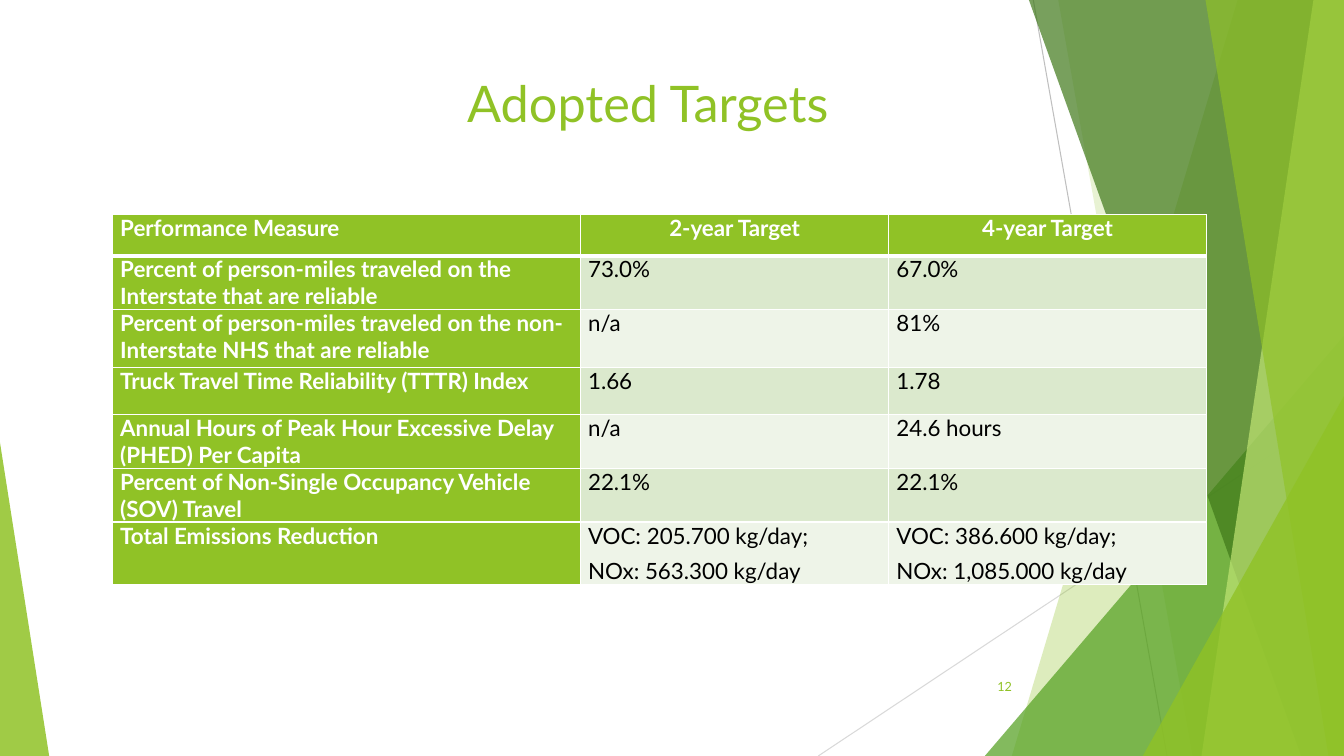
from dataclasses import dataclass

from lxml import etree
from pptx import Presentation
from pptx.dml.color import RGBColor
from pptx.enum import shapes, text
from pptx.oxml import ns
from pptx.util import Cm, Pt

GREEN = RGBColor(0x90, 0xC2, 0x26)
GRASS = RGBColor(0x54, 0xA0, 0x21)
FOREST = RGBColor(0x3F, 0x78, 0x19)
LIME = RGBColor(0xC0, 0xE4, 0x74)
PALE = RGBColor(0xDB, 0xE9, 0xCD)
MIST = RGBColor(0xEE, 0xF4, 0xE8)
SILVER = RGBColor(0xBF, 0xBF, 0xBF)
CLOUD = RGBColor(0xD9, 0xD9, 0xD9)
WHITE = RGBColor(0xFF, 0xFF, 0xFF)
BLACK = RGBColor(0, 0, 0)
FONT = "Lato"
WIDE, HIGH = 33.87, 19.05  # slide size in cm
ALIGN = text.PP_ALIGN


@dataclass
class Ray:
    start: tuple[float, float]
    end: tuple[float, float]
    color: RGBColor


@dataclass
class Slab:
    """A band from a slanted left edge to the right side of the slide."""
    top: float
    base: float
    color: RGBColor
    alpha: int


@dataclass
class Peak:
    """A right triangle standing on the bottom of the slide."""
    left: float
    top: float
    right: float
    tip: float
    color: RGBColor
    alpha: int


RAYS = [
    Ray((26.04, 0), (29.41, HIGH), SILVER),
    Ray((WIDE, 10.24), (20.62, HIGH), CLOUD),
]
DECOR = [
    Slab(31.19, 25.5, GREEN, 30),
    Slab(26.67, 30.05, GREEN, 20),
    Peak(24.82, 8.46, WIDE, 1, GRASS, 72),
    Slab(25.93, 32.79, FOREST, 70),
    Slab(33.1, 30.28, LIME, 70),
    Slab(30.38, 33.48, GREEN, 65),
    Peak(28.8, 9.98, WIDE, 1, GREEN, 80),
    Peak(0, 11.15, 1.24, 0, GREEN, 85),
]
COLS = [11.79, 7.77, 8.0]
ROWS = [1.04, 1.19, 1.45, 1.19, 1.19, 1.19, 1.5]
DATA = [
    ("Performance Measure", "2-year Target", "4-year Target"),
    ("Percent of person-miles traveled on the Interstate that are reliable",
     "73.0%", "67.0%"),
    ("Percent of person-miles traveled on the non-Interstate NHS that are reliable",
     "n/a", "81%"),
    ("Truck Travel Time Reliability (TTTR) Index", "1.66", "1.78"),
    ("Annual Hours of Peak Hour Excessive Delay (PHED) Per Capita",
     "n/a", "24.6 hours"),
    ("Percent of Non-Single Occupancy Vehicle (SOV) Travel", "22.1%", "22.1%"),
    ("Total Emissions Reduction",
     "VOC: 205.700 kg/day;\nNOx: 563.300 kg/day",
     "VOC: 386.600 kg/day;\nNOx: 1,085.000 kg/day"),
]


def add_run(par, words: str, size: float, color: RGBColor, bold: bool = False) -> None:
    run = par.add_run()
    run.text = words
    run.font.name = FONT
    run.font.size = Pt(size)
    run.font.bold = bold
    run.font.color.rgb = color


def draw_ray(slide, ray: Ray) -> None:
    ends = [Cm(v) for v in ray.start + ray.end]
    line = slide.shapes.add_connector(shapes.MSO_CONNECTOR.STRAIGHT, *ends)
    line.line.color.rgb = ray.color
    line.line.width = Pt(0.75)
    etree.SubElement(line.element.spPr, ns.qn("a:effectLst"))


def draw_decor(slide, item: Slab | Peak) -> None:
    if isinstance(item, Slab):
        pen = slide.shapes.build_freeform(Cm(item.top), Cm(0))
        pen.add_line_segments([(Cm(WIDE), Cm(0)), (Cm(WIDE), Cm(HIGH)),
                               (Cm(item.base), Cm(HIGH))])
        shape = pen.convert_to_shape()
    else:
        shape = slide.shapes.add_shape(
            shapes.MSO_SHAPE.ISOSCELES_TRIANGLE, Cm(item.left), Cm(item.top),
            Cm(item.right - item.left), Cm(HIGH - item.top))
        shape.adjustments[0] = item.tip
    shape.shadow.inherit = False
    shape.line.fill.background()
    shape.fill.solid()
    shape.fill.fore_color.rgb = item.color
    tint = shape.element.spPr.find(".//" + ns.qn("a:srgbClr"))
    etree.SubElement(tint, ns.qn("a:alpha"), val=str(item.alpha * 1000))


def set_edges(cell, top: int, base: int) -> None:
    """Draw white borders; top and base are widths in points."""
    props = cell._tc.get_or_add_tcPr()
    for side, width in (("L", 1), ("R", 1), ("T", top), ("B", base)):
        edge = etree.SubElement(props, ns.qn("a:ln" + side), w=str(Pt(width)))
        fill = etree.SubElement(edge, ns.qn("a:solidFill"))
        etree.SubElement(fill, ns.qn("a:srgbClr"), val=str(WHITE))


def fill_cell(cell, words: str, row: int, col: int) -> None:
    head = row == 0
    label = head or col == 0
    set_edges(cell, 3 if row == 1 else 1, 3 if head else 1)
    cell.fill.solid()
    cell.fill.fore_color.rgb = GREEN if label else (PALE if row % 2 else MIST)
    cell.margin_left = cell.margin_right = Cm(0.19)
    cell.margin_top = cell.margin_bottom = 0
    for i, part in enumerate(words.split("\n")):
        par = cell.text_frame.add_paragraph() if i else cell.text_frame.paragraphs[0]
        if head:
            par.alignment = ALIGN.CENTER if col else ALIGN.JUSTIFY
        else:
            par.space_before = par.space_after = Pt(3)
        add_run(par, part, 16, WHITE if label else BLACK, label)


def draw_table(slide) -> None:
    frame = slide.shapes.add_table(len(ROWS), len(COLS), Cm(2.84), Cm(5.41),
                                   Cm(sum(COLS)), Cm(sum(ROWS)))
    table = frame.table
    for col, width in zip(table.columns, COLS):
        col.width = Cm(width)
    for row, height in zip(table.rows, ROWS):
        row.height = Cm(height)
    for r, line in enumerate(DATA):
        for c, words in enumerate(line):
            fill_cell(table.cell(r, c), words, r, c)


def draw_title(slide) -> None:
    title = slide.shapes.title
    title.element.getparent().append(title.element)  # in front of the decor
    title.left, title.top = Cm(4.55), Cm(1.7)
    title.width, title.height = Cm(23.88), Cm(3.66)
    title.text_frame.vertical_anchor = text.MSO_ANCHOR.TOP
    par = title.text_frame.paragraphs[0]
    par.alignment = ALIGN.CENTER
    add_run(par, "Adopted Targets ", 36, GREEN)


def draw_number(slide) -> None:
    box = slide.shapes.add_textbox(Cm(23.85), Cm(16.79), Cm(1.9), Cm(1.02))
    box.text_frame.word_wrap = True
    box.text_frame.vertical_anchor = text.MSO_ANCHOR.MIDDLE
    par = box.text_frame.paragraphs[0]
    par.alignment = ALIGN.RIGHT
    add_run(par, "12", 9, GREEN)


def main() -> None:
    deck = Presentation()
    deck.slide_width, deck.slide_height = Cm(WIDE), Cm(HIGH)
    slide = deck.slides.add_slide(deck.slide_layouts.get_by_name("Title Only"))
    for ray in RAYS:
        draw_ray(slide, ray)
    for item in DECOR:
        draw_decor(slide, item)
    draw_title(slide)
    draw_number(slide)
    draw_table(slide)
    deck.save("out.pptx")


if __name__ == "__main__":
    main()
